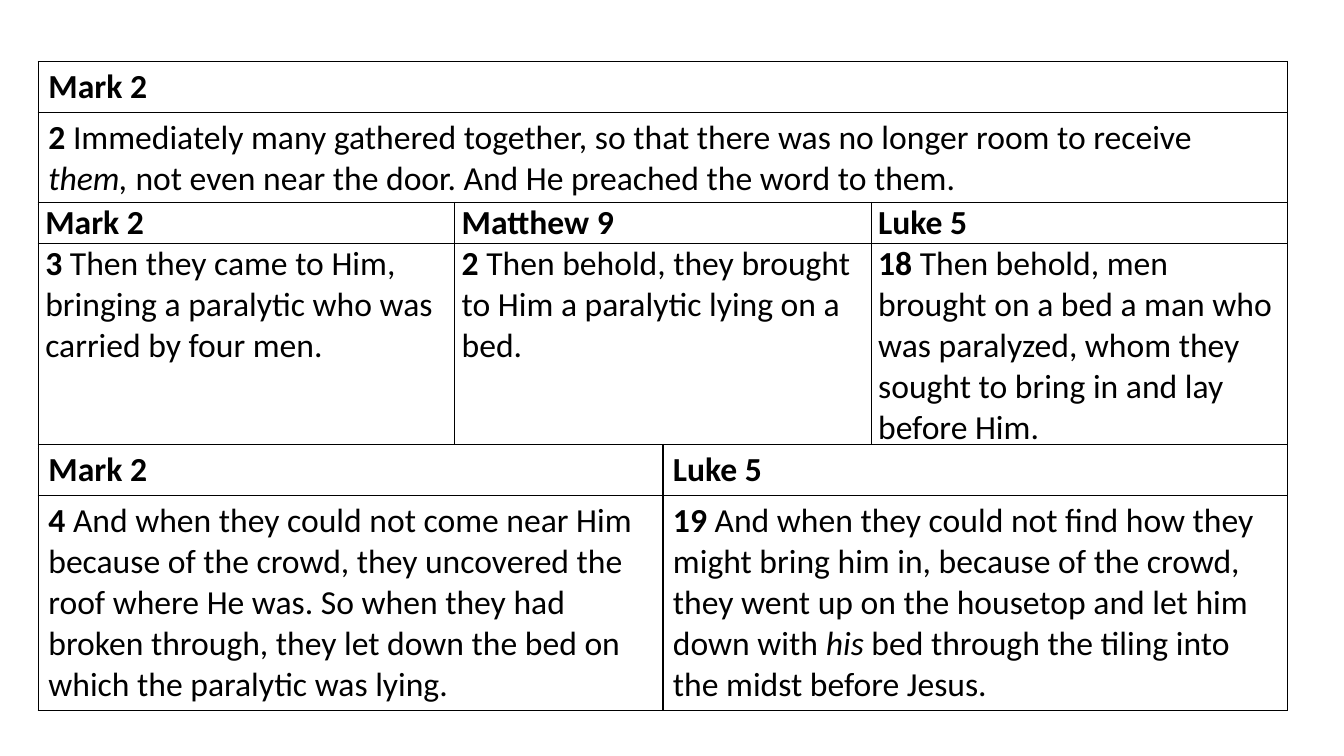
from lxml import etree
from pptx import Presentation
from pptx import util as u
from pptx.dml.color import RGBColor
from pptx.oxml import ns

BLACK = RGBColor(0x00, 0x00, 0x00)
WHITE = RGBColor(0xFF, 0xFF, 0xFF)
BOLD, ITALIC, PLAIN = "b", "i", ""

CROWD = [
    [[("Mark 2", BOLD)]],
    [[("2 ", BOLD),
      ("Immediately many gathered together, so that there was no longer room to receive ", PLAIN),
      ("them,", ITALIC),
      (" not even near the door. And He preached the word to them.", PLAIN)]],
]
ARRIVAL = [
    [[("Mark 2", BOLD)], [("Matthew 9", BOLD)], [("Luke 5", BOLD)]],
    [[("3", BOLD),
      (" Then they came to Him, bringing a paralytic who was carried by four men.", PLAIN)],
     [("2", BOLD),
      (" Then behold, they brought to Him a paralytic lying on a bed.", PLAIN)],
     [("18", BOLD),
      (" Then behold, men brought on a bed a man who was paralyzed, whom they "
       "sought to bring in and lay before Him.", PLAIN)]],
]
ROOF = [
    [[("Mark 2", BOLD)], [("Luke 5", BOLD)]],
    [[("4", BOLD),
      (" And when they could not come near Him because of the crowd, they uncovered the roof "
       "where He was. So when they had broken through, they let down the bed on which the "
       "paralytic was lying.", PLAIN)],
     [("19", BOLD),
      (" And when they could not find how they might bring him in, because of the crowd, they "
       "went up on the housetop and let him down with ", PLAIN),
      ("his", ITALIC),
      (" bed through the tiling into the midst before Jesus.", PLAIN)]],
]


class VerseSlide:
    font = "Calibri"
    size = u.Pt(24)
    border = u.Pt(1)
    left = u.Inches(0.38)
    width = u.Inches(12.39)

    def __init__(self, prs):
        self.slide = prs.slides.add_slide(prs.slide_layouts[6])
        self.row = prs.slide_height / 75

    def table(self, top, heights, verses, margins=None):
        count = len(verses[0])
        frame = self.slide.shapes.add_table(
            len(verses), count, self.left, round(top * self.row),
            self.width, round(sum(heights) * self.row))
        table = frame.table
        table.first_row = table.horz_banding = False
        for row, height, passages in zip(table.rows, heights, verses):
            row.height = round(height * self.row)
            for cell, passage in zip(row.cells, passages):
                self.cell(cell, passage, margins)
        return top + sum(heights)

    def cell(self, cell, passage, margins):
        if margins:
            cell.margin_left = cell.margin_right = margins[0]
            cell.margin_top = cell.margin_bottom = margins[1]
        self.borders(cell)
        cell.fill.solid()
        cell.fill.fore_color.rgb = WHITE
        p = cell.text_frame.paragraphs[0]
        p.font.name = self.font
        p.font.color.rgb = BLACK
        for words, style in passage:
            r = p.add_run()
            r.text = words
            r.font.size = self.size
            r.font.bold = style == BOLD
            r.font.italic = style == ITALIC

    def borders(self, cell):
        props = cell._tc.get_or_add_tcPr()
        for side in ("lnL", "lnR", "lnT", "lnB"):
            line = etree.SubElement(props, ns.qn("a:" + side), w=str(self.border))
            fill = etree.SubElement(line, ns.qn("a:solidFill"))
            etree.SubElement(fill, ns.qn("a:srgbClr"), val=str(BLACK))


def main():
    prs = Presentation()
    prs.slide_width, prs.slide_height = u.Inches(13.33), u.Inches(7.5)
    s = VerseSlide(prs)
    top = s.table(6.1, [5, 9], CROWD)
    top = s.table(top, [4, 20], ARRIVAL, margins=(u.Inches(0.07), 0))
    s.table(top, [5, 21.2], ROOF)
    prs.save("out.pptx")


if __name__ == "__main__":
    main()
